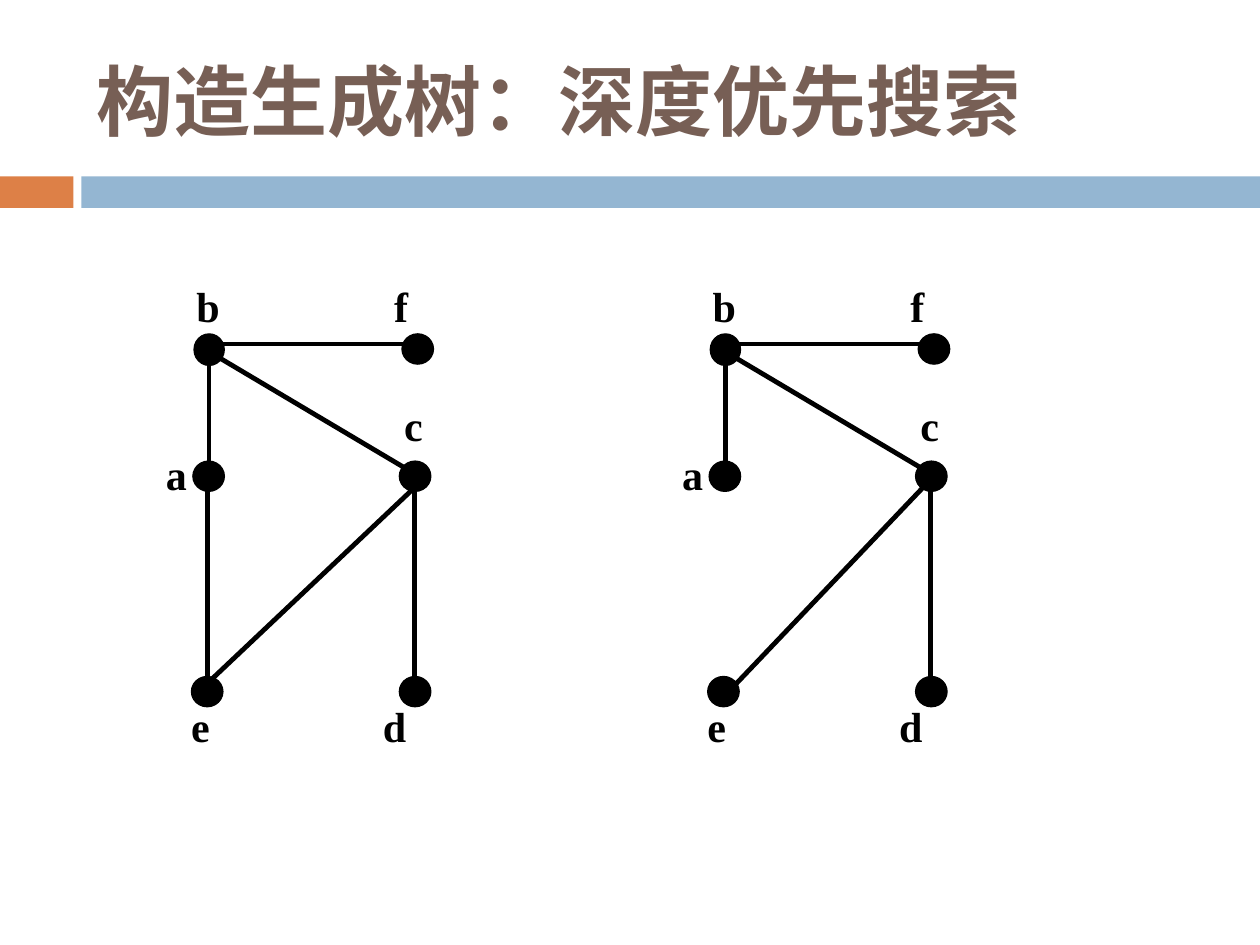
from dataclasses import dataclass

from lxml import etree
from pptx import Presentation
from pptx import util as u
from pptx.dml.color import RGBColor
from pptx.enum import shapes, text
from pptx.oxml.ns import qn


@dataclass(frozen=True)
class Theme:
    ink: str = "000000"
    brown: str = "775F55"
    orange: str = "DD8047"
    blue: str = "94B6D2"
    head: str = "Calibri"
    body: str = "Times New Roman"
    big: float = 44
    small: float = 24
    edge: float = 2.75
    rim: float = 0.75


T = Theme()
STEP = 295  # from the left graph to the right one

# Name: left, top, width, height of each dot in the left graph
DOTS = {
    "a": (110.2, 263.5, 18, 17.3),
    "b": (110.9, 190.8, 17.3, 18),
    "c": (228.2, 263.5, 18, 17.3),
    "d": (228.2, 386.6, 18, 17.3),
    "e": (109.4, 386.6, 18, 17.3),
    "f": (229.7, 190.8, 18, 17.3),
}

# Name: left, top of each label box
NAMES = {
    "a": (87.8, 252.7),
    "b": (105.1, 157),
    "c": (223.9, 224.6),
    "d": (211.7, 396.7),
    "e": (102.2, 396.7),
    "f": (218.2, 157),
}

# Edges that both graphs share, then those of each graph
TREE = [
    (119.5, 265, 119.5, 207.4),
    (121.7, 202.3, 236.9, 270.7),
    (236.9, 278.6, 236.9, 388.8),
    (235.4, 196.6, 127.4, 196.6),
]
LOOP = [(236.9, 278.6, 118.8, 390.2), (118.8, 278.6, 118.8, 388.8)]
LAST = [(235.1, 275.8, 122, 394.6)]


def tint(code):
    return RGBColor.from_string(code)


def add_form(slide, kind, box, fill, rim=0):
    form = slide.shapes.add_shape(kind, *map(u.Pt, box))
    form.shadow.inherit = False
    form.fill.solid()
    form.fill.fore_color.rgb = tint(fill)
    if rim:
        form.line.color.rgb = tint(fill)
        form.line.width = u.Pt(rim)
    else:
        form.line.fill.background()


def add_text(slide, words, box, font, size, color, anchor=text.MSO_ANCHOR.TOP):
    frame = slide.shapes.add_textbox(*map(u.Pt, box)).text_frame
    frame.word_wrap = True
    frame.vertical_anchor = anchor
    frame.text = words
    style = frame.paragraphs[0].runs[0].font
    style.name = font
    style.size = u.Pt(size)
    style.bold = True
    style.color.rgb = tint(color)


def add_edge(slide, ends):
    edge = slide.shapes.add_connector(
        shapes.MSO_CONNECTOR.STRAIGHT, *map(u.Pt, ends))
    edge.line.color.rgb = tint(T.ink)
    edge.line.width = u.Pt(T.edge)
    etree.SubElement(edge._element.spPr, qn("a:effectLst"))


def add_graph(slide, shift, edges):
    for x1, y1, x2, y2 in edges:
        add_edge(slide, (x1 + shift, y1, x2 + shift, y2))
    for name, (x, y, w, h) in DOTS.items():
        add_form(slide, shapes.MSO_SHAPE.OVAL, (x + shift, y, w, h),
                 T.ink, T.rim)
        left, top = NAMES[name]
        add_text(slide, name, (left + shift, top, 42, 36),
                 T.body, T.small, T.ink)


def main():
    deck = Presentation()
    deck.slide_width, deck.slide_height = u.Pt(720), u.Pt(540)
    slide = deck.slides.add_slide(deck.slide_layouts[6])

    # Bars and title
    rect = shapes.MSO_SHAPE.RECTANGLE
    add_form(slide, rect, (0, 100.8, 42, 18), T.orange)
    add_form(slide, rect, (46.5, 100.8, 673.5, 18), T.blue)
    add_text(slide, "构造生成树：深度优先搜索", (48, 18, 642, 78),
             T.head, T.big, T.brown, text.MSO_ANCHOR.MIDDLE)

    # Graph with its cycle, then its spanning tree
    add_graph(slide, 0, TREE + LOOP)
    add_graph(slide, STEP, TREE + LAST)

    deck.save("out.pptx")


if __name__ == "__main__":
    main()
